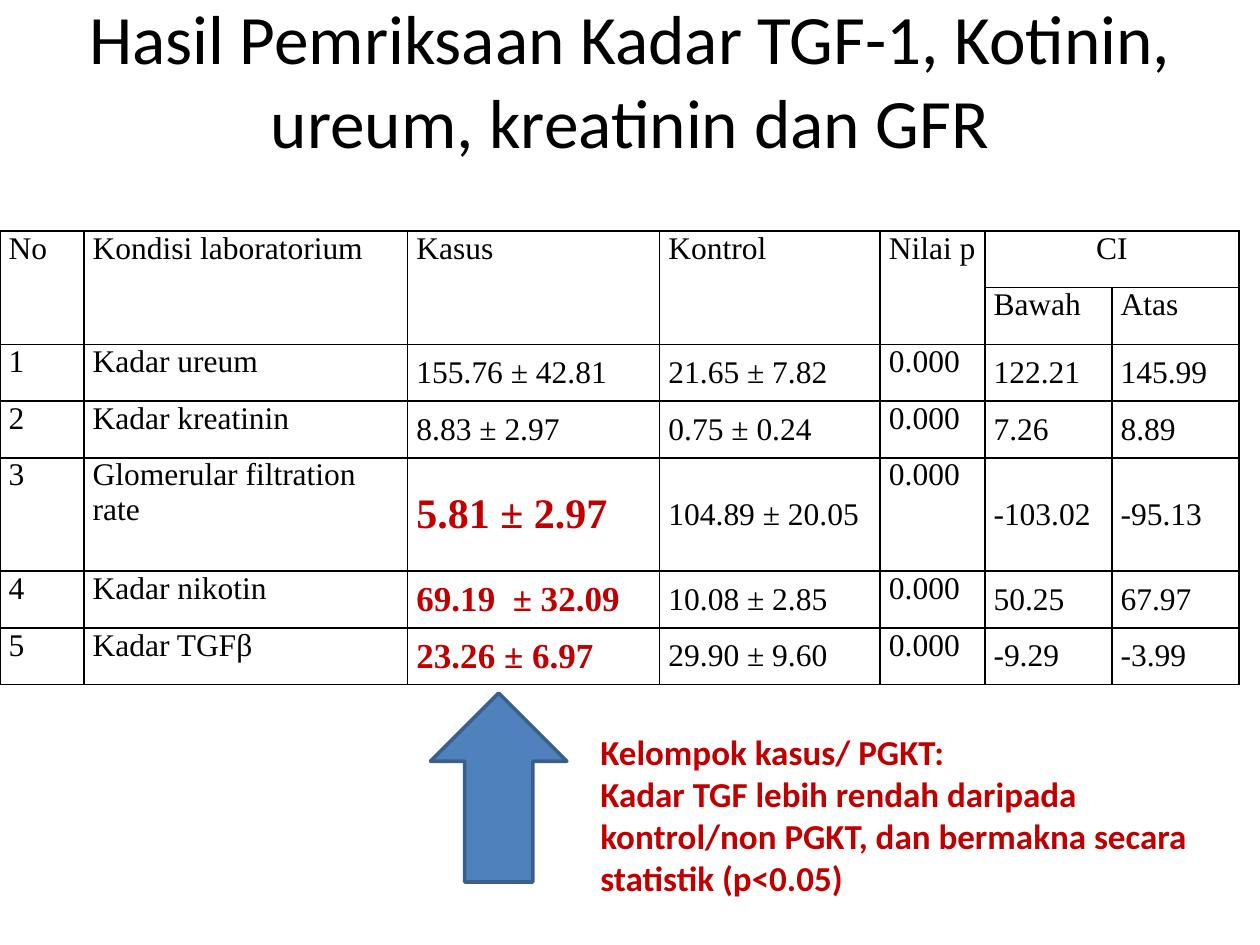
from itertools import product

from lxml import etree
from pptx import Presentation
from pptx.dml.color import RGBColor
from pptx.enum import shapes, text
from pptx.oxml.ns import qn
from pptx.util import Pt

THEME = {
    "heading_font": "Calibri", "table_font": "Times New Roman",
    "ink": "000000", "accent": "C00000", "arrow": "4F81BD", "arrow_line": "3A5F8C",
    "title": 39.6, "body": 18, "note": 20, "large": 24,
}

TITLE = "Hasil Pemriksaan Kadar TGF-1, Kotinin, ureum, kreatinin dan GFR"
NOTE = [
    "Kelompok kasus/ PGKT:",
    "Kadar TGF lebih rendah daripada kontrol/non PGKT, dan bermakna secara statistik (p<0.05)",
]
ROWS = [
    ("No", "Kondisi laboratorium", "Kasus", "Kontrol", "Nilai p", "CI", ""),
    ("", "", "", "", "", "Bawah", "Atas"),
    ("1", "Kadar ureum", "155.76 ± 42.81", "21.65 ± 7.82", "0.000", "122.21", "145.99"),
    ("2", "Kadar kreatinin", "8.83 ± 2.97", "0.75 ± 0.24", "0.000", "7.26", "8.89"),
    ("3", "Glomerular filtration rate", "5.81 ± 2.97", "104.89 ± 20.05", "0.000", "-103.02", "-95.13"),
    ("4", "Kadar nikotin", "69.19  ± 32.09", "10.08 ± 2.85", "0.000", "50.25", "67.97"),
    ("5", "Kadar TGFβ", "23.26 ± 6.97", "29.90 ± 9.60", "0.000", "-9.29", "-3.99"),
]
WIDTHS = [48, 185, 144, 126, 59.8, 72.6, 72.6]
ROW_HEIGHT = 32.4
TALL_ROW = 4
HEADER_ROWS = 2
MERGES = [((0, column), (1, column)) for column in range(5)] + [((0, 5), (0, 6))]
VALUE_COLUMNS = {2, 3, 5, 6}
HIGHLIGHTS = {(4, 2): THEME["large"], (5, 2): THEME["note"], (6, 2): THEME["note"]}


def write(frame, paragraphs, *, font, size, color=THEME["ink"], bold=False,
          align=text.PP_ALIGN.LEFT):
    frame.word_wrap = True
    for index, words in enumerate(paragraphs):
        para = frame.paragraphs[0] if index == 0 else frame.add_paragraph()
        para.alignment = align
        span = para.add_run()
        span.text = words
        span.font.name = font
        span.font.size = Pt(size)
        span.font.bold = bold
        span.font.color.rgb = RGBColor.from_string(color)


def add_borders(cell):
    properties = cell._tc.get_or_add_tcPr()
    for index, side in enumerate(("lnL", "lnR", "lnT", "lnB")):
        line = etree.Element(qn(f"a:{side}"), w=str(Pt(1)))
        fill = etree.SubElement(line, qn("a:solidFill"))
        etree.SubElement(fill, qn("a:srgbClr"), val=THEME["ink"])
        properties.insert(index, line)


def add_text_box(page, bounds, paragraphs, **style):
    box = page.shapes.add_textbox(*map(Pt, bounds))
    write(box.text_frame, paragraphs, font=THEME["heading_font"], **style)
    return box


def add_results(page):
    heights = [ROW_HEIGHT * (2 if row == TALL_ROW else 1) for row in range(len(ROWS))]
    table = page.shapes.add_table(
        len(ROWS), len(WIDTHS), Pt(0), Pt(132), Pt(sum(WIDTHS)), Pt(sum(heights))).table
    table.first_row = table.horz_banding = False
    for column, width in zip(table.columns, WIDTHS):
        column.width = Pt(width)
    for row, height in zip(table.rows, heights):
        row.height = Pt(height)
    for start, end in MERGES:
        table.cell(*start).merge(table.cell(*end))
    for row, column in product(range(len(ROWS)), range(len(WIDTHS))):
        cell = table.cell(row, column)
        cell.margin_left = cell.margin_right = Pt(5)
        cell.margin_top = cell.margin_bottom = Pt(0)
        centred = row >= HEADER_ROWS and column in VALUE_COLUMNS
        cell.vertical_anchor = text.MSO_ANCHOR.MIDDLE if centred else text.MSO_ANCHOR.TOP
        cell.fill.background()
        add_borders(cell)
        if cell.is_spanned:
            continue
        spot = (row, column)
        marked = spot in HIGHLIGHTS
        write(cell.text_frame, [ROWS[row][column]], font=THEME["table_font"],
              size=HIGHLIGHTS.get(spot, THEME["body"]), bold=marked,
              color=THEME["accent"] if marked else THEME["ink"],
              align=text.PP_ALIGN.CENTER if spot == (0, 5) else text.PP_ALIGN.LEFT)


def add_arrow(page):
    arrow = page.shapes.add_shape(
        shapes.MSO_SHAPE.RIGHT_ARROW, Pt(231), Pt(411), Pt(108), Pt(78))
    arrow.rotation = 270
    arrow.shadow.inherit = False
    arrow.fill.solid()
    arrow.fill.fore_color.rgb = RGBColor.from_string(THEME["arrow"])
    arrow.line.color.rgb = RGBColor.from_string(THEME["arrow_line"])
    arrow.line.width = Pt(2)


def main():
    deck = Presentation()
    deck.slide_width, deck.slide_height = Pt(720), Pt(540)
    page = deck.slides.add_slide(deck.slide_layouts[6])
    title = add_text_box(page, (36, 0, 648, 90), [TITLE], size=THEME["title"],
                         align=text.PP_ALIGN.CENTER)
    title.text_frame.vertical_anchor = text.MSO_ANCHOR.MIDDLE
    add_results(page)
    add_arrow(page)
    note = add_text_box(page, (336, 414, 354, 104.4), NOTE, size=THEME["note"],
                        color=THEME["accent"], bold=True)
    note.text_frame.auto_size = text.MSO_AUTO_SIZE.SHAPE_TO_FIT_TEXT
    deck.save("out.pptx")


if __name__ == "__main__":
    main()
